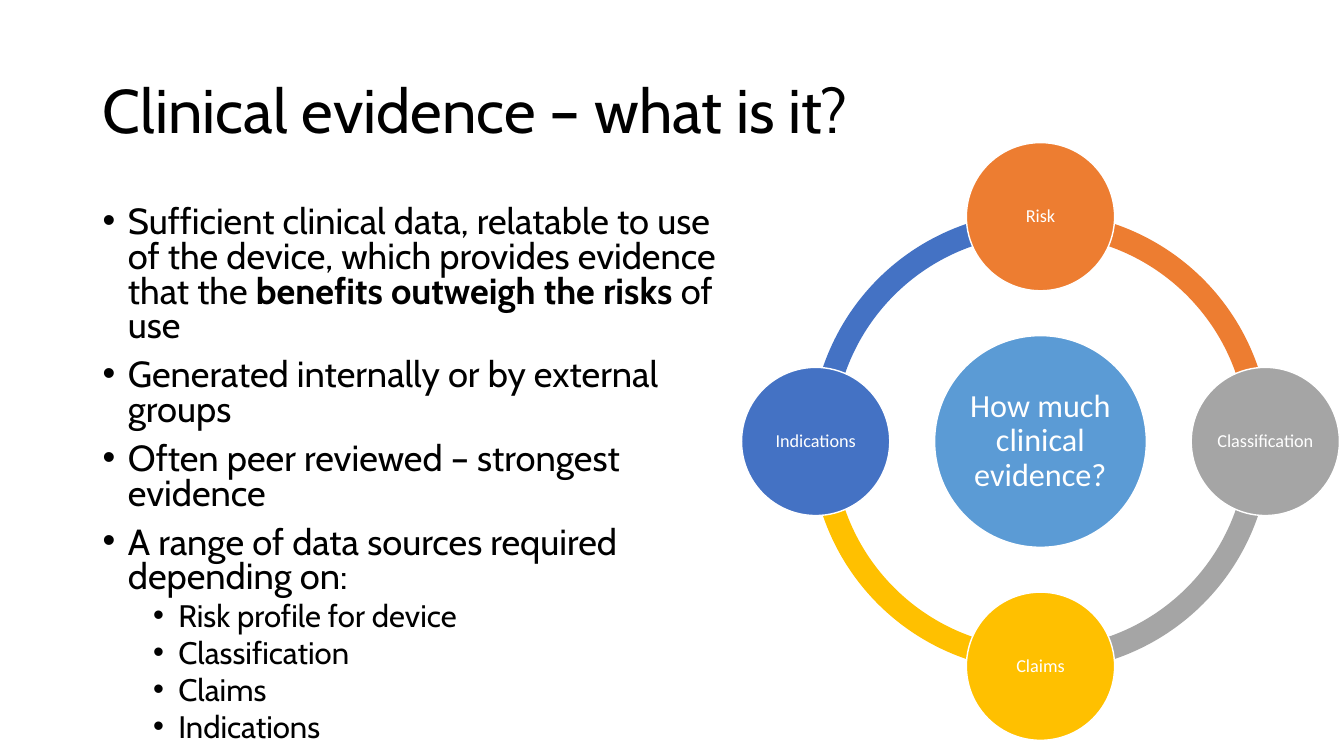
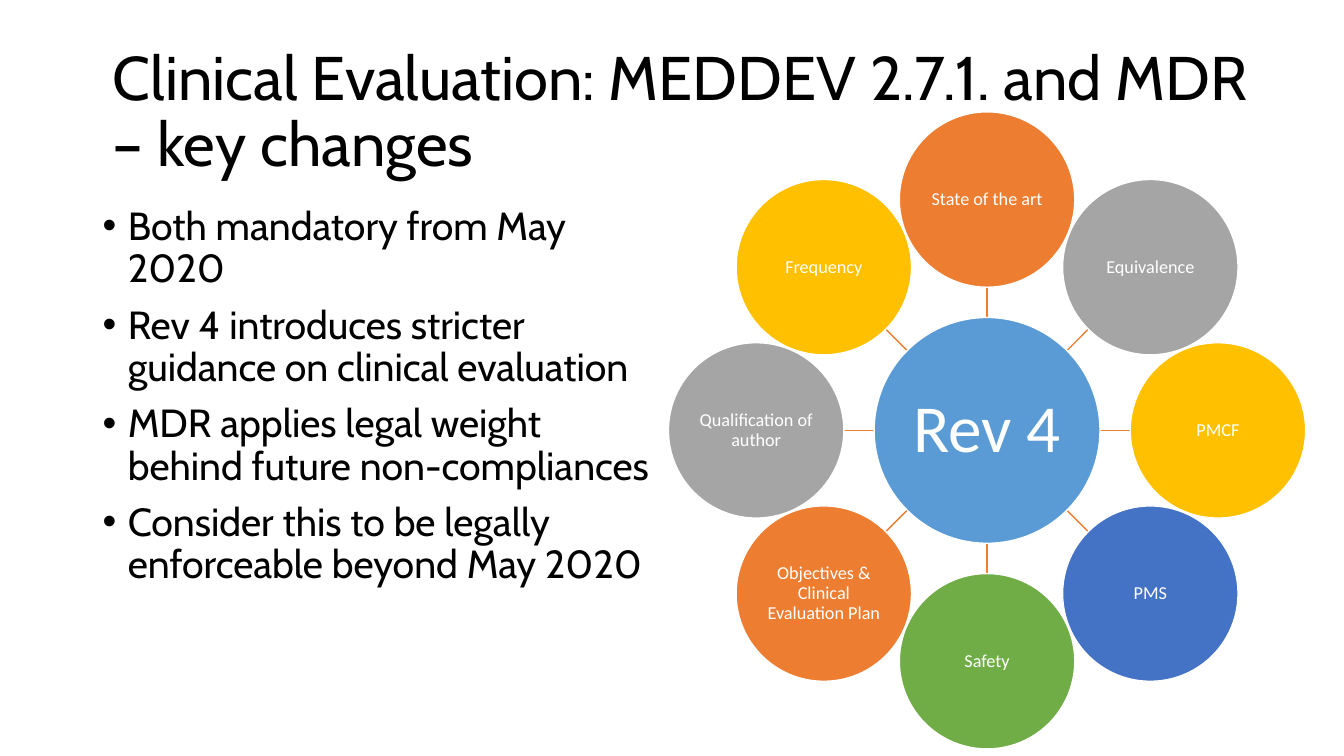
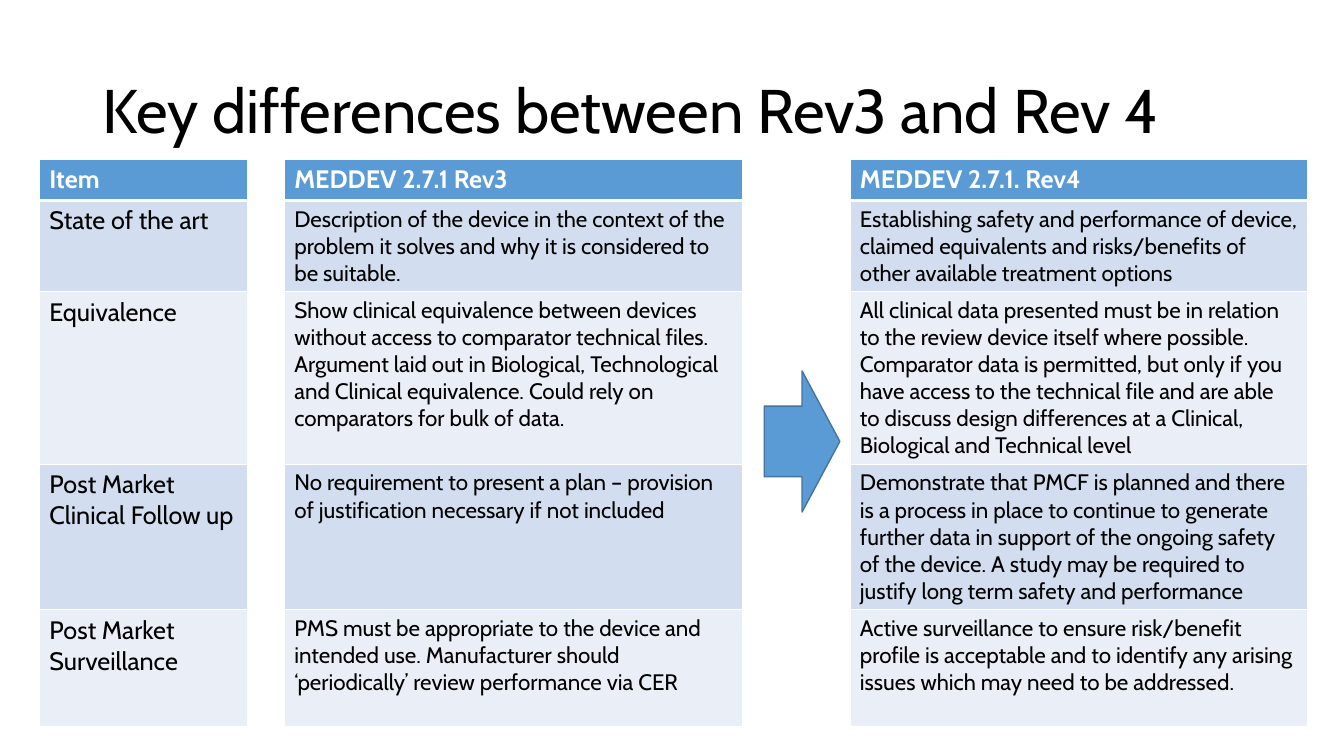
import math
from dataclasses import dataclass

import pptx
import pptx.dml.color
import pptx.enum.shapes
import pptx.enum.text
import pptx.oxml.ns
import pptx.util
from lxml import etree

Inches = pptx.util.Inches
Pt = pptx.util.Pt
RGBColor = pptx.dml.color.RGBColor
SHAPE = pptx.enum.shapes.MSO_SHAPE
ALIGN = pptx.enum.text.PP_ALIGN
ANCHOR = pptx.enum.text.MSO_ANCHOR
qn = pptx.oxml.ns.qn

BLACK = RGBColor(0x00, 0x00, 0x00)
WHITE = RGBColor(0xFF, 0xFF, 0xFF)
BLUE = RGBColor(0x5B, 0x9B, 0xD5)
DARK_BLUE = RGBColor(0x43, 0x73, 0x9E)
INDIGO = RGBColor(0x44, 0x72, 0xC4)
ORANGE = RGBColor(0xED, 0x7D, 0x31)
GREY = RGBColor(0xA5, 0xA5, 0xA5)
GOLD = RGBColor(0xFF, 0xC0, 0x00)
GREEN = RGBColor(0x70, 0xAD, 0x47)
BAND_DARK = RGBColor(0xD2, 0xDE, 0xEF)
BAND_LIGHT = RGBColor(0xEA, 0xEF, 0xF7)

TEXT_FONT = "Cabin"
DIAGRAM_FONT = "Calibri"


@dataclass
class Bullet:
    runs: list[tuple[str, bool]]
    level: int = 0


@dataclass
class Node:
    text: str
    color: RGBColor


@dataclass
class Wheel:
    """A hub circle with nodes spaced evenly around it, clockwise from the top."""
    cx: float
    cy: float
    radius: float
    hub_size: float
    node_size: float
    hub_text: str
    hub_pt: float
    nodes: list[Node]

    def point(self, index: int, radius: float) -> tuple[float, float]:
        angle = math.radians(360 * index / len(self.nodes) - 90)
        return self.cx + radius * math.cos(angle), self.cy + radius * math.sin(angle)


def add_run(p, text: str, size: float, color: RGBColor, font: str = TEXT_FONT,
            bold: bool = False) -> None:
    r = p.add_run()
    r.text = text
    r.font.size = Pt(size)
    r.font.name = font
    r.font.color.rgb = color
    r.font.bold = bold


def add_titled_slide(prs, title: str, left: float = 0.92):
    s = prs.slides.add_slide(prs.slide_layouts[5])
    sp = s.shapes.title
    sp.left, sp.top, sp.width, sp.height = map(Inches, (left, 0.4, 11.5, 1.45))
    tf = sp.text_frame
    tf.word_wrap = True
    tf.auto_size = pptx.enum.text.MSO_AUTO_SIZE.NONE
    tf.vertical_anchor = ANCHOR.MIDDLE
    p = tf.paragraphs[0]
    p.alignment = ALIGN.LEFT
    p.line_spacing = 0.9
    add_run(p, title, 44, BLACK)
    return s


def add_bullets(s, bullets: list[Bullet], width: float, height: float,
                sizes: tuple[float, ...], spacing: float) -> None:
    tf = s.shapes.add_textbox(Inches(0.92), Inches(2), Inches(width), Inches(height)).text_frame
    tf.word_wrap = True
    for i, bullet in enumerate(bullets):
        p = tf.add_paragraph() if i else tf.paragraphs[0]
        p.level = bullet.level
        p.line_spacing = spacing
        if i:
            p.space_before = Pt(5 if bullet.level else 10)
        pPr = p._p.get_or_add_pPr()
        pPr.set("marL", str(Inches(0.25 + 0.5 * bullet.level)))
        pPr.set("indent", str(Inches(-0.25)))
        etree.SubElement(pPr, qn("a:buFont")).set("typeface", "Arial")
        etree.SubElement(pPr, qn("a:buChar")).set("char", "•")
        for text, bold in bullet.runs:
            add_run(p, text, sizes[bullet.level], BLACK, bold=bold)


def add_preset(s, kind, left: float, top: float, width: float, height: float,
               fill: RGBColor, line: RGBColor | None = None):
    sp = s.shapes.add_shape(kind, Inches(left), Inches(top), Inches(width), Inches(height))
    sp.shadow.inherit = False
    sp.fill.solid()
    sp.fill.fore_color.rgb = fill
    if line is None:
        sp.line.fill.background()
    else:
        sp.line.color.rgb = line
        sp.line.width = Pt(1)
    return sp


def add_circle(s, cx: float, cy: float, size: float, fill: RGBColor, text: str,
               pt: float) -> None:
    sp = add_preset(s, SHAPE.OVAL, cx - size / 2, cy - size / 2, size, size, fill, WHITE)
    tf = sp.text_frame
    tf.word_wrap = True
    tf.vertical_anchor = ANCHOR.MIDDLE
    tf.margin_left = tf.margin_right = tf.margin_top = tf.margin_bottom = Inches(0.02)
    p = tf.paragraphs[0]
    p.alignment = ALIGN.CENTER
    p.line_spacing = 0.9
    add_run(p, text, pt, WHITE, DIAGRAM_FONT)


def add_wheel_circles(s, wheel: Wheel) -> None:
    add_circle(s, wheel.cx, wheel.cy, wheel.hub_size, BLUE, wheel.hub_text, wheel.hub_pt)
    for i, node in enumerate(wheel.nodes):
        add_circle(s, *wheel.point(i, wheel.radius), wheel.node_size, node.color, node.text, 13)


def add_wheel_ring(s, wheel: Wheel, size: float) -> None:
    """Arcs from each node to the next, in the colour of the first."""
    step = 360 / len(wheel.nodes)
    for i, node in reversed(list(enumerate(wheel.nodes))):
        sp = add_preset(s, SHAPE.BLOCK_ARC, wheel.cx - size / 2, wheel.cy - size / 2,
                        size, size, node.color)
        # Angles are held in 60000ths of a degree, adjustments in 100000ths.
        sp.adjustments[0] = (i * step - 90) % 360 * 0.6
        sp.adjustments[1] = ((i + 1) * step - 90) % 360 * 0.6
        sp.adjustments[2] = 0.05


def add_wheel_spokes(s, wheel: Wheel) -> None:
    for i in range(len(wheel.nodes)):
        start = wheel.point(i, wheel.hub_size / 2)
        end = wheel.point(i, wheel.radius - wheel.node_size / 2)
        spoke = s.shapes.add_connector(pptx.enum.shapes.MSO_CONNECTOR.STRAIGHT,
                                       *map(Inches, start + end))
        spoke.line.color.rgb = ORANGE
        spoke.line.width = Pt(1)
        etree.SubElement(spoke._element.spPr, qn("a:effectLst"))


def set_borders(cell, **widths: float) -> None:
    """White borders by side (L, R, T, B), in points; call before filling the cell."""
    tcPr = cell._tc.get_or_add_tcPr()
    for side, width in widths.items():
        ln = etree.SubElement(tcPr, qn(f"a:ln{side}"), w=str(Pt(width)))
        fill = etree.SubElement(ln, qn("a:solidFill"))
        etree.SubElement(fill, qn("a:srgbClr"), val=str(WHITE))


def add_comparison(s, rows: list[tuple[str, str, str]]) -> None:
    """Three text columns, with an empty column between each pair."""
    widths = (2.07, 0.36, 4.55, 1.06, 4.54)
    heights = (0.41, 0.9, 1.7, 1.44, 1.16)
    table = s.shapes.add_table(len(heights), len(widths), Inches(0.39), Inches(1.58),
                               Inches(sum(widths)), Inches(sum(heights))).table
    table.first_row = table.horz_banding = False
    for column, width in zip(table.columns, widths):
        column.width = Inches(width)
    for r, (row, height) in enumerate(zip(table.rows, heights)):
        row.height = Inches(height)
        header = r == 0
        band = BLUE if header else (BAND_LIGHT, BAND_DARK)[r % 2]
        for c, cell in enumerate(row.cells):
            set_borders(cell, L=1, R=1, T=3 if r == 1 else 1, B=3 if header else 1)
            if c % 2:
                cell.fill.background()
                continue
            cell.fill.solid()
            cell.fill.fore_color.rgb = band
            add_run(cell.text_frame.paragraphs[0], rows[r][c // 2],
                    18 if header or c == 0 else 16, WHITE if header else BLACK, bold=header)


def build_evidence(prs) -> None:
    s = add_titled_slide(prs, "Clinical evidence – what is it?")
    add_bullets(s, [
        Bullet([("Sufficient clinical data, relatable to use of the device, which provides "
                 "evidence that the ", False),
                ("benefits outweigh the risks ", True), ("of use", False)]),
        Bullet([("Generated internally or by external groups", False)]),
        Bullet([("Often peer reviewed – strongest evidence", False)]),
        Bullet([("A range of data sources required depending on:", False)]),
        *(Bullet([(text, False)], 1)
          for text in ("Risk profile for device", "Classification", "Claims", "Indications")),
    ], 6.52, 5.2, (25.9, 22.2), 0.8)
    wheel = Wheel(10.32, 4.38, 2.23, 2.1, 1.47, "How much clinical evidence?", 23, [
        Node("Risk", ORANGE), Node("Classification", GREY),
        Node("Claims", GOLD), Node("Indications", INDIGO)])
    add_wheel_ring(s, wheel, 4.56)
    add_wheel_circles(s, wheel)


def build_key_changes(prs) -> None:
    s = add_titled_slide(prs, "Clinical Evaluation: MEDDEV 2.7.1. and MDR – key changes", 1.02)
    wheel = Wheel(9.79, 4.27, 2.29, 2.24, 1.74, "Rev 4", 48, [
        Node("State of the art", ORANGE), Node("Equivalence", GREY),
        Node("PMCF", GOLD), Node("PMS", INDIGO), Node("Safety", GREEN),
        Node("Objectives & Clinical Evaluation Plan", ORANGE),
        Node("Qualification of author", GREY), Node("Frequency", GOLD)])
    add_wheel_spokes(s, wheel)
    add_wheel_circles(s, wheel)
    add_bullets(s, [Bullet([(text, False)]) for text in (
        "Both mandatory from May 2020",
        "Rev 4 introduces stricter guidance on clinical evaluation",
        "MDR applies legal weight behind future non-compliances",
        "Consider this to be legally enforceable beyond May 2020",
    )], 5.66, 4.76, (28,), 0.9)


def build_differences(prs) -> None:
    s = add_titled_slide(prs, "Key differences between Rev3 and Rev 4")
    add_comparison(s, [
        ("Item", "MEDDEV 2.7.1 Rev3", "MEDDEV 2.7.1. Rev4"),
        ("State of the art",
         "Description of the device in the context of the problem it solves and why it is "
         "considered to be suitable.",
         "Establishing safety and performance of device, claimed equivalents and "
         "risks/benefits of other available treatment options"),
        ("Equivalence",
         "Show clinical equivalence between devices without access to comparator technical "
         "files. Argument laid out in Biological, Technological and Clinical equivalence. "
         "Could rely on comparators for bulk of data.",
         "All clinical data presented must be in relation to the review device itself where "
         "possible. Comparator data is permitted, but only if you have access to the "
         "technical file and are able to discuss design differences at a Clinical, "
         "Biological and Technical level"),
        ("Post Market Clinical Follow up",
         "No requirement to present a plan – provision of justification necessary if not "
         "included",
         "Demonstrate that PMCF is planned and there is a process in place to continue to "
         "generate further data in support of the ongoing safety of the device. A study may "
         "be required to justify long term safety and performance"),
        ("Post Market Surveillance",
         "PMS must be appropriate to the device and intended use. Manufacturer should "
         "‘periodically’ review performance via CER",
         "Active surveillance to ensure risk/benefit profile is acceptable and to identify "
         "any arising issues which may need to be addressed."),
    ])
    add_preset(s, SHAPE.RIGHT_ARROW, 7.58, 3.68, 0.75, 1.4, BLUE, DARK_BLUE)


def main() -> None:
    prs = pptx.Presentation()
    prs.slide_width = Inches(13.33)
    prs.slide_height = Inches(7.5)
    build_evidence(prs)
    build_key_changes(prs)
    build_differences(prs)
    prs.save("out.pptx")


if __name__ == "__main__":
    main()
